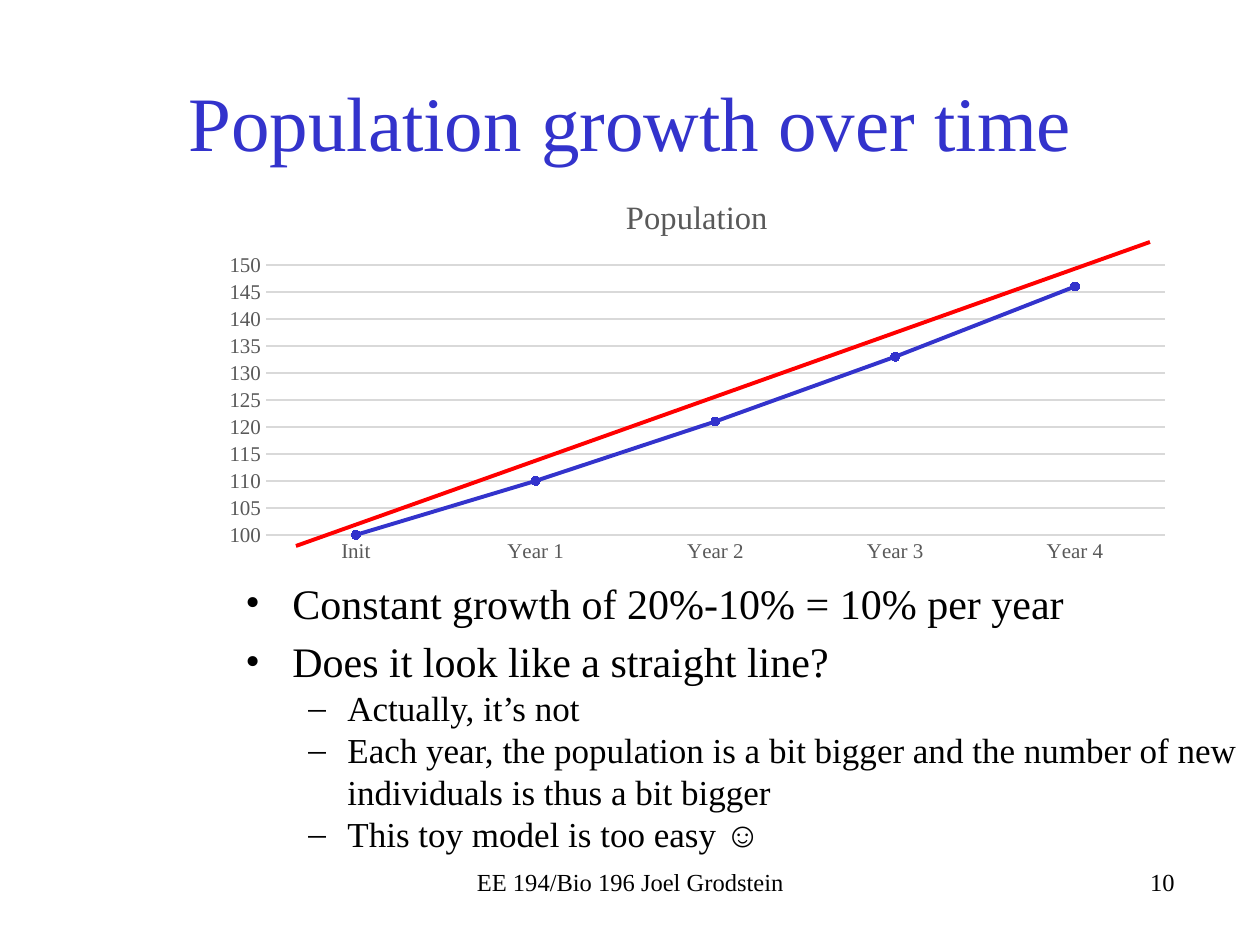
from lxml import etree
from pptx import Presentation
from pptx.chart.data import CategoryChartData
from pptx.dml.color import RGBColor
from pptx.enum.chart import XL_CHART_TYPE as ChartType, XL_MARKER_STYLE as Marker
from pptx.enum.chart import XL_TICK_MARK as TickMark
from pptx.enum.shapes import MSO_CONNECTOR as Connector
from pptx.enum.text import MSO_ANCHOR as Anchor, PP_ALIGN as Align
from pptx.oxml import parse_xml
from pptx.oxml.ns import nsdecls, qn
from pptx.util import Pt

PX = 914400 / 126
FONT = "Times New Roman"
BLACK = RGBColor(0x00, 0x00, 0x00)
BLUE = RGBColor(0x33, 0x33, 0xCC)
RED = RGBColor(0xFF, 0x00, 0x00)
GRAY = RGBColor(0x59, 0x59, 0x59)
GRID = RGBColor(0xD9, 0xD9, 0xD9)

# text, box, size, colour, alignment, anchor
LABELS = [
    ("Population growth over time", (95, 42, 1071, 158), 44, BLUE, Align.CENTER, Anchor.MIDDLE),
    ("EE 194/Bio 196 Joel Grodstein", (431, 861, 399, 63), 14, BLACK, Align.CENTER, Anchor.TOP),
    ("10", (788, 861, 399, 63), 14, BLACK, Align.RIGHT, Anchor.TOP),
]
BULLETS = [
    (0, "Constant growth of 20%-10% = 10% per year"),
    (0, "Does it look like a straight line?"),
    (1, "Actually, it’s not"),
    (1, "Each year, the population is a bit bigger and the number of new "
        "individuals is thus a bit bigger"),
    (1, "This toy model is too easy ☺"),
]
# per level: size, space before, left margin, hanging indent, bullet
LEVELS = [(24, 4.8, 47, 47, "•"), (20, 0, 102, 39, "–")]
BODY_BOX = (233, 571, 1027, 113)
POPULATION = {"Init": 100, "Year 1": 110, "Year 2": 121, "Year 3": 133, "Year 4": 146}
CHART_BOX = (210, 176, 974, 394)
PLOT_BOX = (266, 265, 899, 270)
STRAIGHT_LINE = (296, 546, 1150, 242)


def px(*lengths):
    return [round(length * PX) for length in lengths]


def style_font(font, size, color):
    font.name = FONT
    font.size = Pt(size)
    font.bold = False
    font.color.rgb = color


def style_line(line, color, width):
    line.color.rgb = color
    line.width = Pt(width)


def add_label(slide, text, box, size, color, align, anchor):
    frame = slide.shapes.add_textbox(*px(*box)).text_frame
    frame.word_wrap = True
    frame.vertical_anchor = anchor
    paragraph = frame.paragraphs[0]
    paragraph.text = text
    paragraph.alignment = align
    style_font(paragraph.runs[0].font, size, color)


def add_bullets(slide):
    frame = slide.shapes.add_textbox(*px(*BODY_BOX)).text_frame
    frame.word_wrap = True
    for index, (level, text) in enumerate(BULLETS):
        size, space, margin, hanging, bullet = LEVELS[level]
        paragraph = frame.add_paragraph() if index else frame.paragraphs[0]
        paragraph.text = text
        paragraph.level = level
        paragraph.space_before = Pt(space)
        style_font(paragraph.runs[0].font, size, BLACK)
        properties = paragraph._p.get_or_add_pPr()
        left, indent = px(margin, -hanging)
        properties.set("marL", str(left))
        properties.set("indent", str(indent))
        etree.SubElement(properties, qn("a:buFont"), typeface=FONT)
        etree.SubElement(properties, qn("a:buChar"), char=bullet)


def place_plot(chart):
    """Fix the inner plot area, as fractions of the chart's box."""
    left, top, width, height = CHART_BOX
    plot_left, plot_top, plot_width, plot_height = PLOT_BOX
    fractions = {
        "x": (plot_left - left) / width, "y": (plot_top - top) / height,
        "w": plot_width / width, "h": plot_height / height,
    }
    values = "".join(f'<c:{key} val="{value:.4f}"/>' for key, value in fractions.items())
    layout = parse_xml(
        f'<c:layout {nsdecls("c")}><c:manualLayout><c:layoutTarget val="inner"/>'
        f'<c:xMode val="edge"/><c:yMode val="edge"/>{values}</c:manualLayout></c:layout>')
    plot_area = chart._chartSpace.chart.plotArea
    for old_layout in plot_area.findall(qn("c:layout")):
        plot_area.remove(old_layout)
    plot_area.insert(0, layout)


def add_population_chart(slide):
    data = CategoryChartData()
    data.categories = list(POPULATION)
    data.add_series("Population", list(POPULATION.values()))
    chart = slide.shapes.add_chart(ChartType.LINE_MARKERS, *px(*CHART_BOX), data).chart
    style_font(chart.font, 10, BLACK)
    chart.has_legend = False
    chart.has_title = True
    title = chart.chart_title.text_frame
    title.text = "Population"
    style_font(title.paragraphs[0].runs[0].font, 18.6, GRAY)
    chart.chart_title.include_in_layout = False

    for axis in (chart.category_axis, chart.value_axis):
        axis.major_tick_mark = axis.minor_tick_mark = TickMark.NONE
        style_font(axis.tick_labels.font, 12, GRAY)
    style_line(chart.category_axis.format.line, GRID, 0.75)
    value_axis = chart.value_axis
    value_axis.minimum_scale, value_axis.maximum_scale, value_axis.major_unit = 100, 150, 5
    value_axis.format.line.fill.background()
    style_line(value_axis.major_gridlines.format.line, GRID, 0.75)

    plot = chart.plots[0]
    plot.vary_by_categories = False
    series = plot.series[0]
    series.smooth = False
    style_line(series.format.line, BLUE, 2.25)
    series.marker.style = Marker.CIRCLE
    series.marker.size = 5
    series.marker.format.fill.solid()
    series.marker.format.fill.fore_color.rgb = BLUE
    style_line(series.marker.format.line, BLUE, 0.75)
    place_plot(chart)


def add_straight_line(slide):
    line = slide.shapes.add_connector(Connector.STRAIGHT, *px(*STRAIGHT_LINE))
    style_line(line.line, RED, 2.25)
    etree.SubElement(line._element.spPr, qn("a:effectLst"))


def main():
    presentation = Presentation()
    presentation.slide_width, presentation.slide_height = px(1260, 945)
    slide = presentation.slides.add_slide(presentation.slide_layouts[6])
    for label in LABELS:
        add_label(slide, *label)
    add_bullets(slide)
    add_population_chart(slide)
    add_straight_line(slide)
    presentation.save("out.pptx")


if __name__ == "__main__":
    main()
